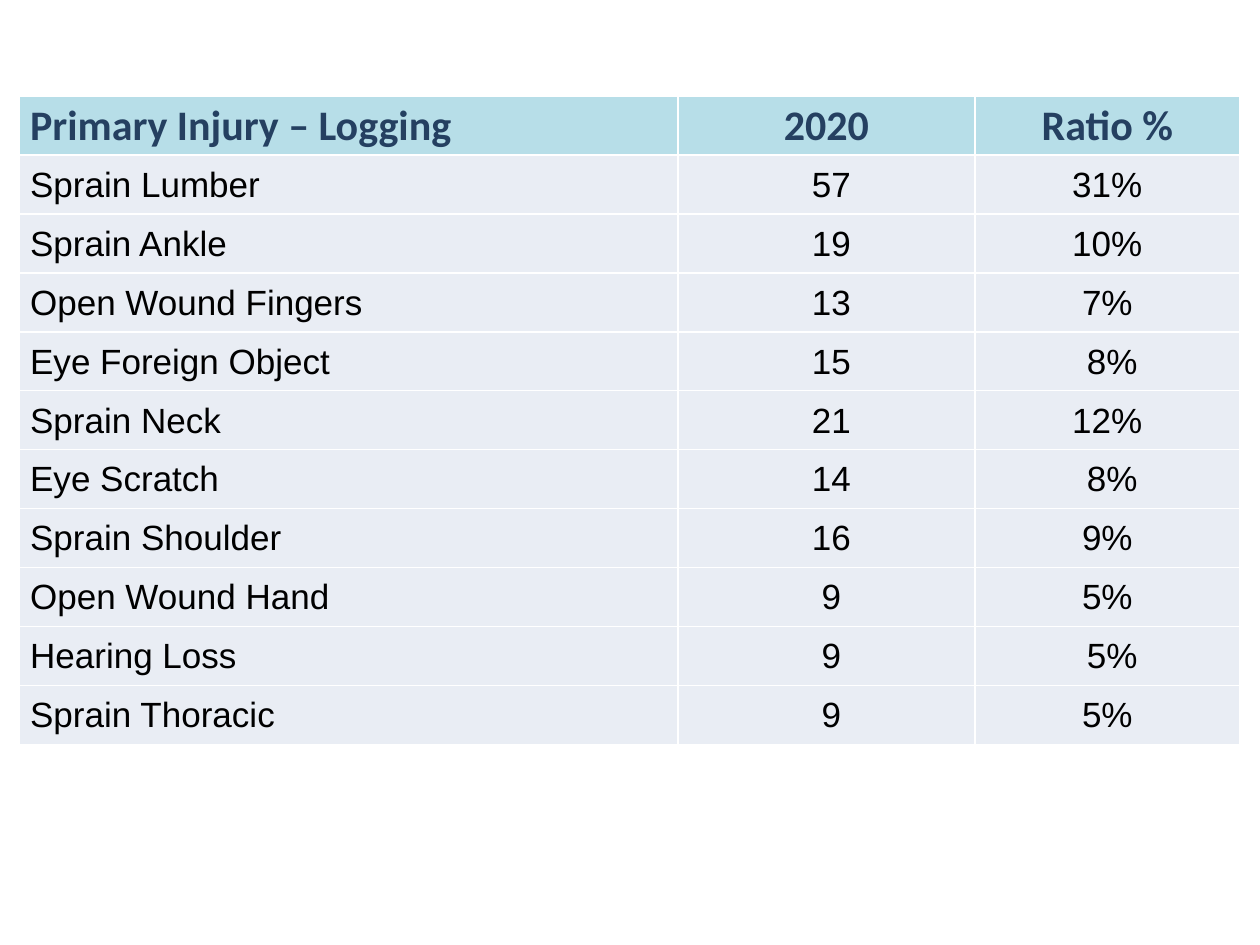
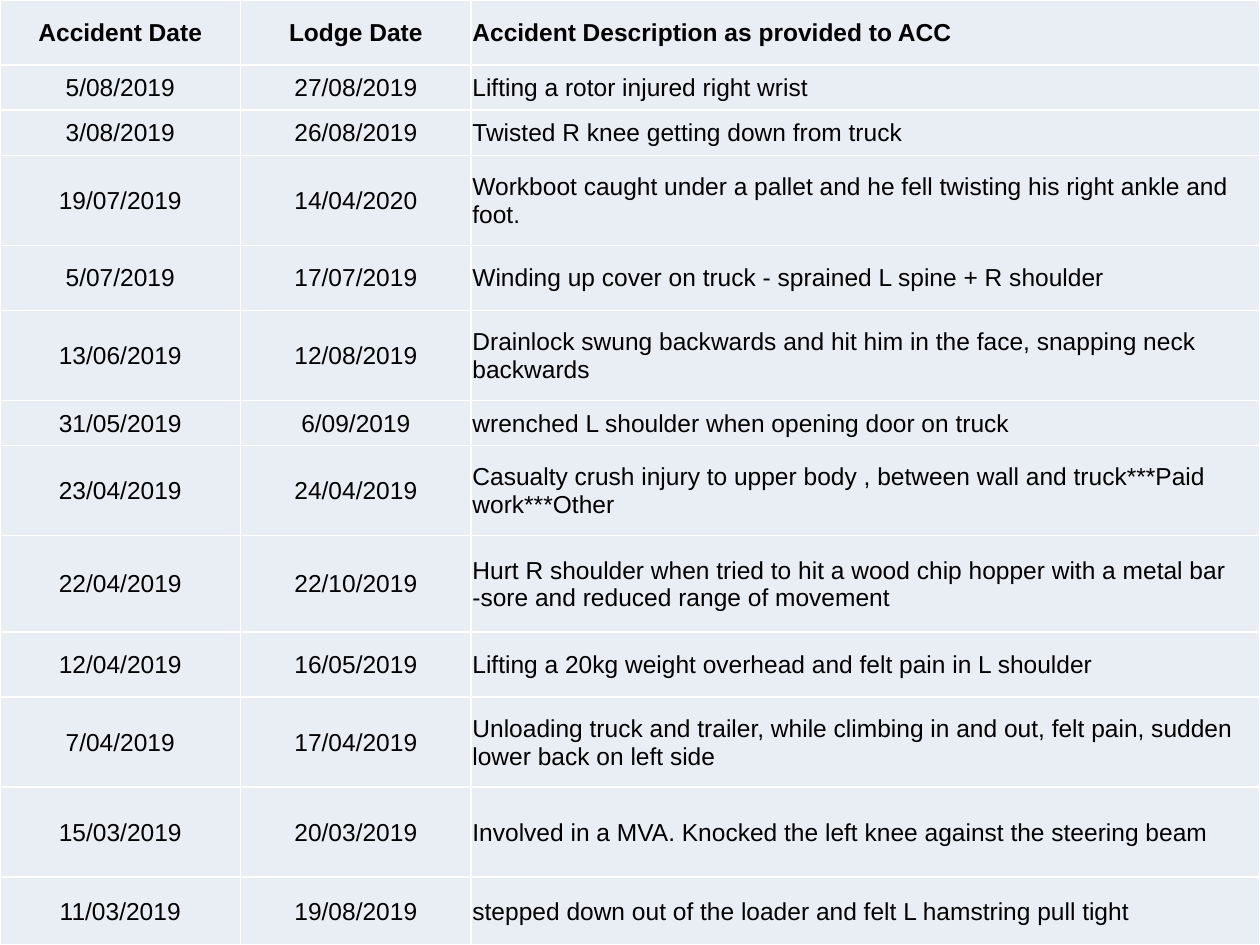
"""Build two slides of injury and accident tables."""
from dataclasses import dataclass

from lxml.etree import SubElement
from pptx import Presentation
from pptx.dml.color import RGBColor
from pptx.enum.text import MSO_ANCHOR, PP_ALIGN
from pptx.oxml.ns import qn
from pptx.presentation import Presentation as Deck
from pptx.table import _Cell as Cell
from pptx.util import Pt


@dataclass(frozen=True)
class Style:
    font: str
    size: float
    ink: str
    fill: str
    bold: bool = False


@dataclass(frozen=True)
class Theme:
    edge: str = "FFFFFF"
    edge_width: float = 1
    inset: float = 0.7
    indent: float = 5.6
    title: Style = Style("Calibri", 24, "254061", "B7DEE8", True)
    large: Style = Style("Arial", 20, "000000", "E9EDF4")
    head: Style = Style("Arial", 14, "000000", "E9EDF4", True)
    small: Style = Style("Arial", 14, "000000", "E9EDF4")


THEME = Theme()
LEFT, MID = PP_ALIGN.LEFT, PP_ALIGN.CENTER


@dataclass(frozen=True)
class Grid:
    left: float
    top: float
    widths: tuple[float, ...]
    heights: tuple[float, ...]
    aligns: tuple[PP_ALIGN, ...]
    head: Style
    body: Style
    rows: tuple[tuple[str, ...], ...]
    indents: frozenset[tuple[int, int]] = frozenset()


INJURIES = (
    ("Primary Injury – Logging", "2020", "Ratio %"),
    ("Sprain Lumber", "57", "31%"),
    ("Sprain Ankle", "19", "10%"),
    ("Open Wound Fingers", "13", "7%"),
    ("Eye Foreign Object", "15", "8%"),
    ("Sprain Neck", "21", "12%"),
    ("Eye Scratch", "14", "8%"),
    ("Sprain Shoulder", "16", "9%"),
    ("Open Wound Hand", "9", "5%"),
    ("Hearing Loss", "9", "5%"),
    ("Sprain Thoracic", "9", "5%"),
)

CLAIMS = (
    ("Accident Date", "Lodge Date", "Accident Description as provided to ACC"),
    ("5/08/2019", "27/08/2019", "Lifting a rotor injured right wrist"),
    ("3/08/2019", "26/08/2019", "Twisted R knee getting down from truck"),
    ("19/07/2019", "14/04/2020",
     "Workboot caught under a pallet and he fell twisting his right ankle and foot."),
    ("5/07/2019", "17/07/2019",
     "Winding up cover on truck - sprained L spine + R shoulder"),
    ("13/06/2019", "12/08/2019",
     "Drainlock swung backwards and hit him in the face, snapping neck backwards"),
    ("31/05/2019", "6/09/2019", "wrenched L shoulder when opening door on truck"),
    ("23/04/2019", "24/04/2019",
     "Casualty crush injury to upper body , between wall and truck"
     "***Paid work***Other"),
    ("22/04/2019", "22/10/2019",
     "Hurt R shoulder when tried to hit a wood chip hopper with a metal bar "
     "-sore and reduced range of movement"),
    ("12/04/2019", "16/05/2019",
     "Lifting a 20kg weight overhead and felt pain in L shoulder"),
    ("7/04/2019", "17/04/2019",
     "Unloading truck and trailer, while climbing in and out, felt pain, "
     "sudden lower back on left side"),
    ("15/03/2019", "20/03/2019",
     "Involved in a MVA. Knocked the left knee against the steering beam"),
    ("11/03/2019", "19/08/2019",
     "stepped down out of the loader and felt L hamstring pull tight"),
)

SHORT, PLAIN, TALL = 25.8, 37.2, 51.4

GRIDS = (
    Grid(
        10.9, 54.9, (376.4, 169.9, 151.2), (33.7,) * len(INJURIES),
        (LEFT, MID, MID), THEME.title, THEME.large, INJURIES,
        frozenset({(row, 0) for row in range(len(INJURIES))}
                  | {(row, 1) for row in range(1, len(INJURIES))}
                  | {(row, 2) for row in (4, 6, 9)}),
    ),
    Grid(
        0, 0, (137.5, 131.8, 450.7),
        (PLAIN, SHORT, SHORT, TALL, PLAIN, TALL, SHORT, TALL, 55.3, PLAIN,
         TALL, TALL, 38.7),
        (MID, MID, LEFT), THEME.head, THEME.small, CLAIMS,
    ),
)


def add_edges(cell: Cell) -> None:
    """Rule all four sides of a cell, ahead of its fill."""
    props = cell._tc.get_or_add_tcPr()
    for place, side in enumerate(("lnL", "lnR", "lnT", "lnB")):
        line = SubElement(props, qn(f"a:{side}"), w=str(Pt(THEME.edge_width)))
        fill = SubElement(line, qn("a:solidFill"))
        SubElement(fill, qn("a:srgbClr"), val=THEME.edge)
        props.insert(place, line)


def fill_cell(cell: Cell, text: str, style: Style, align: PP_ALIGN,
              indent: bool) -> None:
    """Write and format one cell."""
    cell.vertical_anchor = MSO_ANCHOR.MIDDLE
    cell.margin_left = cell.margin_right = cell.margin_top = Pt(THEME.inset)
    cell.margin_bottom = Pt(0)
    cell.fill.solid()
    cell.fill.fore_color.rgb = RGBColor.from_string(style.fill)
    add_edges(cell)
    para = cell.text_frame.paragraphs[0]
    para.alignment = align
    if indent:
        para._p.get_or_add_pPr().set("marL", str(Pt(THEME.indent)))
    run = para.add_run()
    run.text = text
    run.font.name = style.font
    run.font.size = Pt(style.size)
    run.font.bold = style.bold
    run.font.color.rgb = RGBColor.from_string(style.ink)


def add_grid(deck: Deck, grid: Grid) -> None:
    """Add a slide that holds one table."""
    slide = deck.slides.add_slide(deck.slide_layouts[6])
    table = slide.shapes.add_table(
        len(grid.rows), len(grid.widths), Pt(grid.left), Pt(grid.top),
        Pt(sum(grid.widths)), Pt(sum(grid.heights))).table
    table.horz_banding = False
    for col, width in zip(table.columns, grid.widths):
        col.width = Pt(width)
    for row, height in zip(table.rows, grid.heights):
        row.height = Pt(height)
    for row, texts in enumerate(grid.rows):
        style = grid.body if row else grid.head
        for col, (text, align) in enumerate(zip(texts, grid.aligns)):
            fill_cell(table.cell(row, col), text, style, align,
                      (row, col) in grid.indents)


def main() -> None:
    """Build and save the deck."""
    deck = Presentation()
    deck.slide_width, deck.slide_height = Pt(720), Pt(540)
    for grid in GRIDS:
        add_grid(deck, grid)
    deck.save("out.pptx")


if __name__ == "__main__":
    main()
